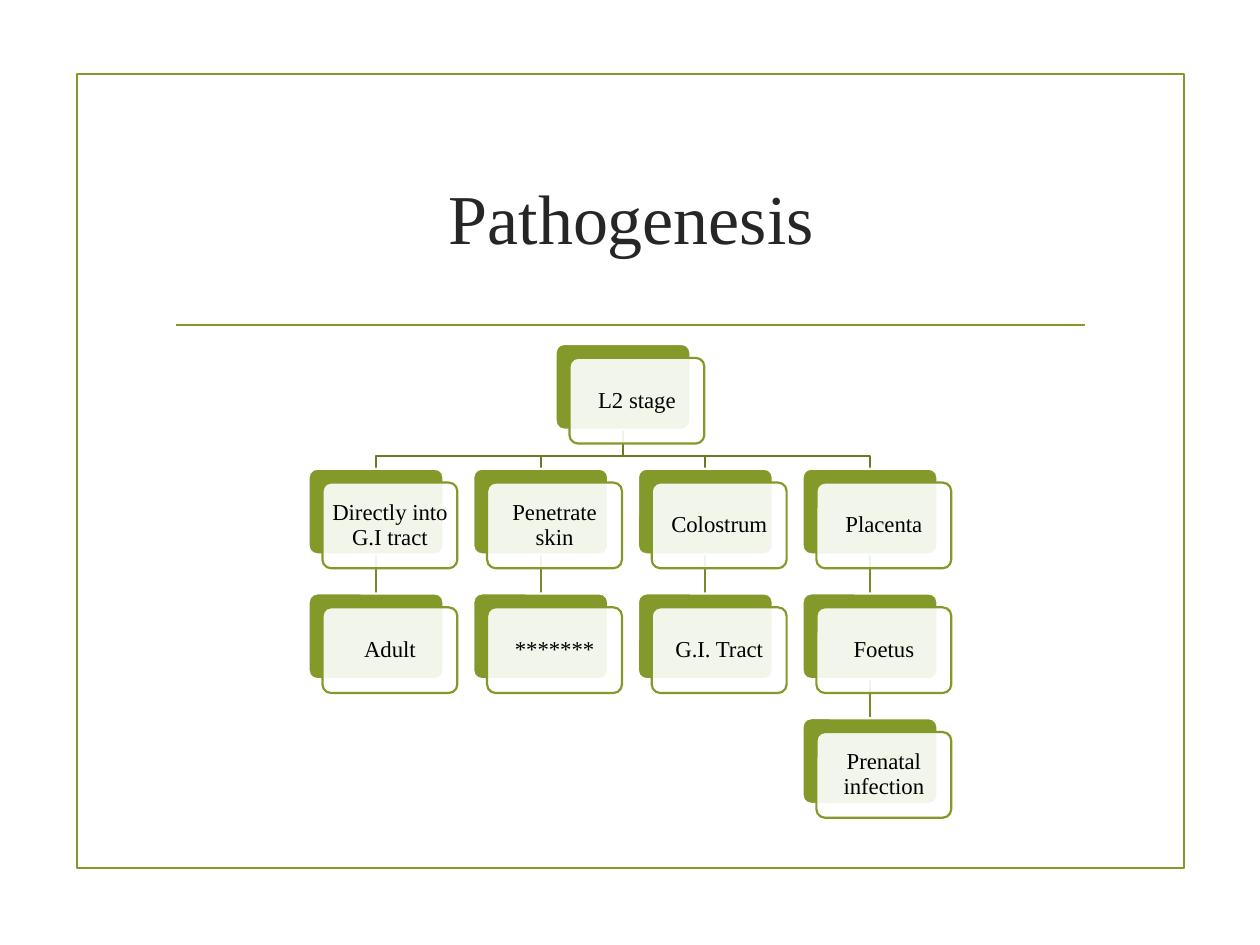
from dataclasses import dataclass
from lxml.etree import SubElement as Sub
from pptx import Presentation as Deck
from pptx.dml.color import RGBColor as Rgb
from pptx.enum.shapes import MSO_CONNECTOR as Conn, MSO_SHAPE as Kind
from pptx.enum.text import MSO_ANCHOR as Anchor, PP_ALIGN as Align
from pptx.oxml.ns import qn
from pptx.util import Inches, Pt


@dataclass(frozen=True)
class Theme:
    green: str = "83992A"
    fork: str = "697B22"
    drop: str = "778B26"
    white: str = "FFFFFF"
    ink: str = "000000"
    head: str = "262626"
    face: str = "Times New Roman"
    big: float = 40
    small: float = 13
    rule: float = 1.25


class Chart:
    """Draws a tree of layered cards on one slide."""

    def __init__(self, slide, theme):
        self.shapes = slide.shapes
        self.theme = theme

    def stroke(self, shape, color):
        shape.line.color.rgb = Rgb.from_string(color)
        shape.line.width = Pt(self.theme.rule)

    def label(self, shape, text, size, color, pad, lead=1.0):
        frame = shape.text_frame
        form = {"word_wrap": True, "vertical_anchor": Anchor.MIDDLE}
        form |= {f"margin_{side}": Inches(pad) for side in ("left", "right", "top", "bottom")}
        para = frame.paragraphs[0]
        para.text = text
        font = para.runs[0].font
        for part, vals in (
            (frame, form),
            (para, {"alignment": Align.CENTER, "line_spacing": lead}),
            (font, {"name": self.theme.face, "size": Pt(size)}),
        ):
            for key, val in vals.items():
                setattr(part, key, val)
        font.color.rgb = Rgb.from_string(color)

    def title(self, text, *box):
        shape = self.shapes.add_textbox(*map(Inches, box))
        self.label(shape, text, self.theme.big, self.theme.head, 0.1)

    def box(self, kind, box, line, fill=None):
        shape = self.shapes.add_shape(kind, *map(Inches, box))
        shape.shadow.inherit = False
        self.stroke(shape, line)
        if fill:
            shape.fill.solid()
            shape.fill.fore_color.rgb = Rgb.from_string(fill)
        else:
            shape.fill.background()
        return shape

    def line(self, start, end, color):
        link = self.shapes.add_connector(Conn.STRAIGHT, *map(Inches, start + end))
        self.stroke(link, color)
        Sub(link._element.spPr, qn("a:effectLst"))

    def bend(self, pts, color):
        first, *rest = [tuple(map(Inches, pt)) for pt in pts]
        pen = self.shapes.build_freeform(*first)
        pen.add_line_segments(rest, close=False)
        shape = pen.convert_to_shape()
        shape.shadow.inherit = False
        shape.fill.background()
        self.stroke(shape, color)

    def card(self, text, left, top, wide, high, shift):
        look = self.theme
        back = self.box(Kind.ROUNDED_RECTANGLE, (left, top, wide, high), look.white, look.green)
        spot = (left + shift, top + shift, wide, high)
        front = self.box(Kind.ROUNDED_RECTANGLE, spot, look.green, look.white)
        for shape in (back, front):
            shape.adjustments[0] = 0.1
        tint = front._element.spPr.find(qn("a:solidFill"))[0]
        Sub(tint, qn("a:alpha"), val="90000")
        self.label(front, text, look.small, look.ink, 0.05, 0.9)


def main():
    deck = Deck()
    deck.slide_width, deck.slide_height = Inches(10), Inches(7.5)
    look = Theme()
    chart = Chart(deck.slides.add_slide(deck.slide_layouts[6]), look)
    chart.box(Kind.RECTANGLE, (0.61, 0.59, 8.79, 6.3), look.green)
    chart.line((1.4, 2.58), (8.61, 2.58), look.green)
    chart.title("Pathogenesis", 1.29, 1, 7.44, 1.43)

    root = "L2 stage"
    paths = [
        ["Directly into G.I tract", "Adult"],
        ["Penetrate skin", "*******"],
        ["Colostrum", "G.I. Tract"],
        ["Placenta", "Foetus", "Prenatal infection"],
    ]
    left, top, wide, high, shift = 2.45, 2.73, 1.07, 0.68, 0.11
    across, down, elbow = 3.92 / 3, 0.99, 3.62
    mid = left + across * (len(paths) - 1) / 2
    stem = mid + wide / 2

    for col, path in enumerate(paths):
        x = left + across * col + wide / 2
        chart.bend([(stem, top + high), (stem, elbow), (x, elbow), (x, top + down)], look.fork)
        for row in range(1, len(path)):
            y = top + down * row
            chart.line((x, y + high), (x, y + down), look.drop)

    chart.card(root, mid, top, wide, high, shift)
    for col, path in enumerate(paths):
        for row, text in enumerate(path, 1):
            chart.card(text, left + across * col, top + down * row, wide, high, shift)
    deck.save("out.pptx")


if __name__ == "__main__":
    main()
